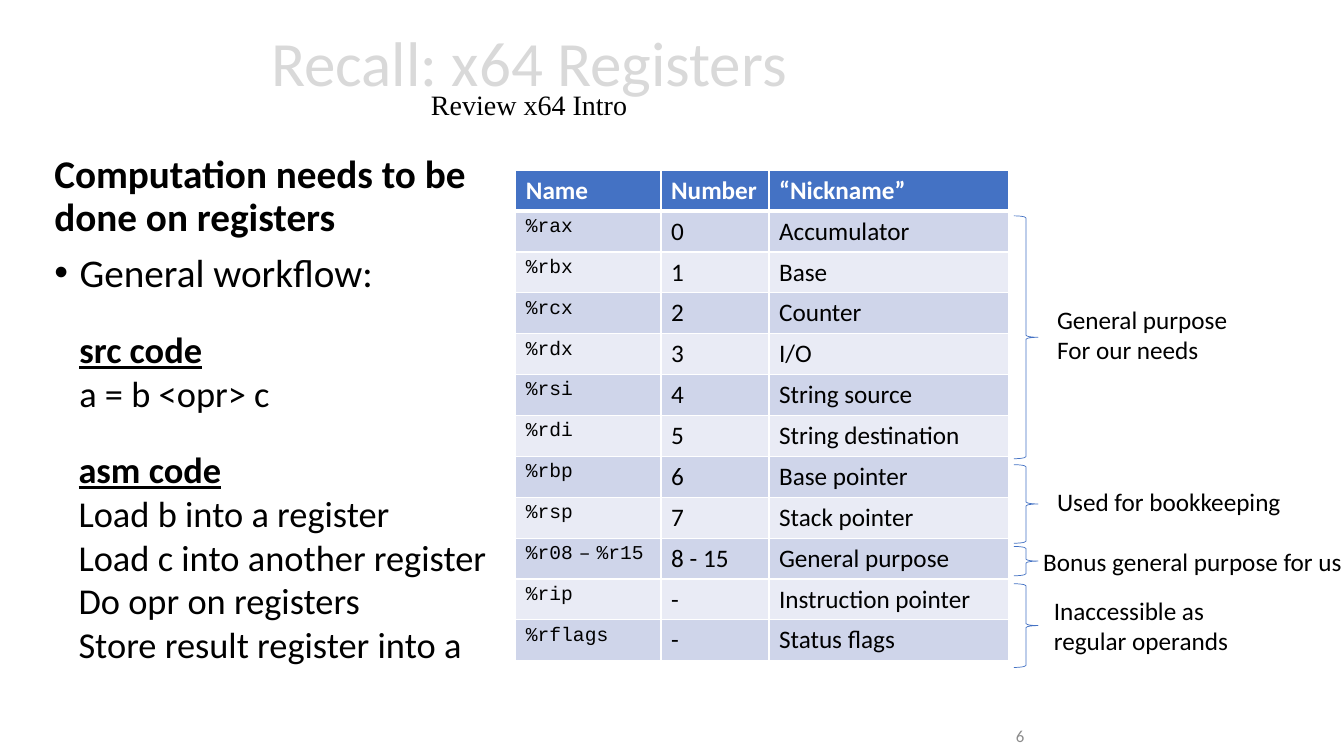
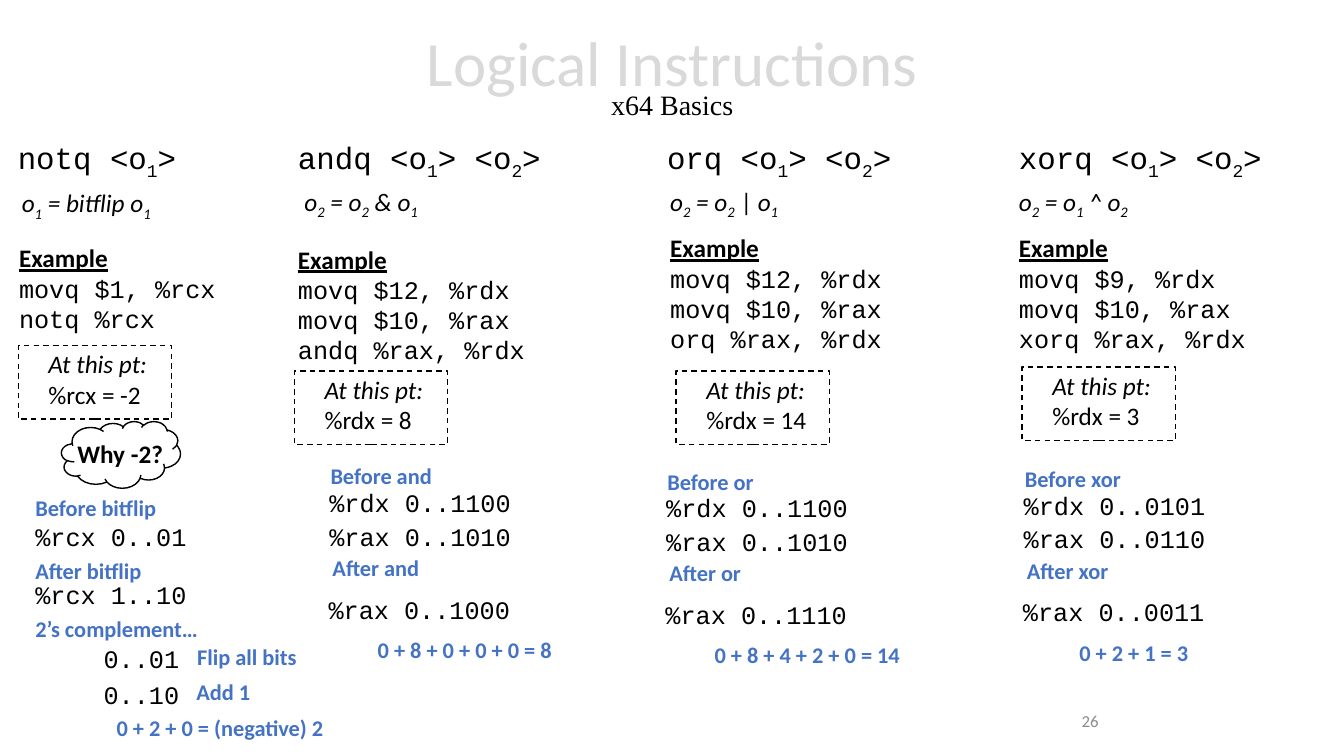
from dataclasses import dataclass

from lxml import etree
from pptx import Presentation
from pptx.dml.color import RGBColor
from pptx.enum.dml import MSO_LINE
from pptx.enum.shapes import MSO_SHAPE
from pptx.enum.text import MSO_ANCHOR, MSO_AUTO_SIZE, PP_ALIGN
from pptx.oxml.ns import qn
from pptx.util import Cm, Pt

RECTANGLE, BRACE, CLOUD = MSO_SHAPE.RECTANGLE, MSO_SHAPE.RIGHT_BRACE, MSO_SHAPE.CLOUD
CENTER, RIGHT = PP_ALIGN.CENTER, PP_ALIGN.RIGHT
TOP, MIDDLE = MSO_ANCHOR.TOP, MSO_ANCHOR.MIDDLE
GROW, FIXED = MSO_AUTO_SIZE.SHAPE_TO_FIT_TEXT, MSO_AUTO_SIZE.NONE
DASH = MSO_LINE.DASH

BOLD, PLAIN = {"bold": True}, {"italic": False}
HEADING = {"bold": True, "underline": True}
THIN_SPACE = (" ", {"size": 7})

REGISTERS_TITLE = ("Recall: x64 Registers", "Review x64 Intro")
REGISTERS_BODY = [[("Computation needs to be done on registers", BOLD)], "General workflow:"]
WORKFLOW = [
    (1.75, 8.13, 5.36, [[("src code", HEADING)], "a = b <opr> c"]),
    (1.73, 11.15, 10.9, [
        [("asm code", HEADING)],
        "Load b into a register",
        "Load c into another register",
        "Do opr on registers",
        "Store result register into a",
    ]),
]
REGISTER_ROWS = [
    ("Name", "Number", "“Nickname”"),
    ("%rax", "0", "Accumulator"),
    ("%rbx", "1", "Base"),
    ("%rcx", "2", "Counter"),
    ("%rdx", "3", "I/O"),
    ("%rsi", "4", "String source"),
    ("%rdi", "5", "String destination"),
    ("%rbp", "6", "Base pointer"),
    ("%rsp", "7", "Stack pointer"),
    ([("%r08", {}), THIN_SPACE, ("–", {}), THIN_SPACE, ("%r15", {})], "8 - 15", "General purpose"),
    ("%rip", "-", "Instruction pointer"),
    ("%rflags", "-", "Status flags"),
]
COLUMN_WIDTHS = (3.66, 2.72, 6.05)
ROW_HEIGHT = 1.03
BRACES = [
    (5.44, 6.12, (26.39, 7.54, 4.85), ["General purpose", "For our needs"]),
    (11.71, 1.98, (26.39, 12.14, 6.2), ["Used for bookkeeping"]),
    (13.77, 0.74, (26.04, 13.64, 8.13), ["Bonus general purpose for us"]),
    (14.71, 2.11, (26.31, 14.88, 4.95), ["Inaccessible as", "regular operands"]),
]

LOGICAL_TITLE = ("Logical Instructions", "x64 Basics")
INSTRUCTIONS = [
    {
        "syntax": (0.2, 3.38, 4.6, "notq <o_1>"),
        "rule": (0.3, 4.6, 4.04, "o_1 = bitflip o_1"),
        "example": (0.23, 5.99, 5.49, ["movq $1, %rcx", "notq %rcx"]),
        "checkpoint": (0.46, 8.71, 3.02, "%rcx = -2"),
    },
    {
        "syntax": (7.26, 3.38, 6.81, "andq <o_1> <o_2>"),
        "rule": (7.42, 4.57, 3.56, "o_2 = o_2 & o_1"),
        "example": (7.26, 6.02, 6.25, ["movq $12, %rdx", "movq $10, %rax", "andq %rax, %rdx"]),
        "checkpoint": (7.42, 9.35, 3.02, "%rdx = 8"),
    },
    {
        "syntax": (16.56, 3.38, 6.32, "orq <o_1> <o_2>"),
        "rule": (16.64, 4.57, 3.4, [("o_2 = o_2 ", {}), ("|", PLAIN), (" o_1", {})]),
        "example": (16.64, 5.74, 5.87, ["movq $12, %rdx", "movq $10, %rax", "orq %rax, %rdx"]),
        "checkpoint": (17.04, 9.35, 3.07, "%rdx = 14"),
    },
    {
        "syntax": (25.43, 3.38, 6.81, "xorq <o_1> <o_2>"),
        "rule": (25.43, 4.57, 3.43, "o_2 = o_1 ^ o_2"),
        "example": (25.43, 5.74, 6.25, ["movq $9, %rdx", "movq $10, %rax", "xorq %rax, %rdx"]),
        "checkpoint": (25.76, 9.25, 3.07, "%rdx = 3"),
    },
]
BITFLIP_STEPS = [
    ("note", 0.64, 12.32, 3.61, "Before bitflip"),
    ("code", 0.64, 13.0, 4.34, "%rcx 0..01"),
    ("note", 0.64, 13.92, 3.25, "After bitflip"),
    ("code", 0.64, 14.48, 4.34, "%rcx 1..10"),
    ("note", 0.64, 15.37, 4.72, "2’s complement…"),
    ("code", 2.36, 16.08, 2.44, "0..01"),
    ("note", 4.72, 16.08, 3.05, "Flip all bits"),
    ("code", 2.36, 16.99, 2.44, "0..10"),
    ("note", 4.7, 16.97, 1.91, "Add 1"),
    ("note", 2.69, 17.88, 5.79, "0 + 2 + 0 = (negative) 2"),
]
TRACE_LAYOUT = [
    ("note", 0.03, 0),
    ("code", 0, 0.62),
    ("code", 0, 1.47),
    ("note", 0.08, 2.31),
    ("code", -0.02, 3.31),
]
TRACES = [
    {
        "origin": (8.05, 11.53),
        "steps": [("Before and", 3.1), ("%rdx 0..1100", 5.11), ("%rax 0..1010", 5.11),
                  ("After and", 2.74), ("%rax 0..1000", 5.11)],
        "sum": (1.22, 4.98, "0 + 8 + 0 + 0 + 0 = 8"),
    },
    {
        "origin": (16.54, 11.66),
        "steps": [("Before or", 2.72), ("%rdx 0..1100", 5.11), ("%rax 0..1010", 5.11),
                  ("After or", 2.36), ("%rax 0..1110", 5.11)],
        "sum": (1.22, 5.26, "0 + 8 + 4 + 2 + 0 = 14"),
    },
    {
        "origin": (25.55, 11.6),
        "steps": [("Before xor", 2.97), ("%rdx 0..0101", 5.11), ("%rax 0..0110", 5.11),
                  ("After xor", 2.62), ("%rax 0..0011", 5.11)],
        "sum": (1.4, 3.3, "0 + 2 + 1 = 3"),
    },
]
SUM_TOP = 4.37


@dataclass(frozen=True)
class Theme:
    black: str = "000000"
    white: str = "FFFFFF"
    accent: str = "4472C4"
    pale: str = "D9D9D9"
    gray: str = "8C8C8C"
    bands: tuple = ("E9EBF5", "CFD5EA")
    sans: str = "Calibri"
    mono: str = "Courier New"
    serif: str = "Times New Roman"
    title: int = 45
    subtitle: int = 20
    body: int = 28
    workflow: int = 26
    syntax: int = 22
    text: int = 18
    note: int = 16
    cell_code: int = 14
    footer: int = 12


THEME = Theme()
STEP_STYLES = {
    "note": {"size": THEME.note, "color": THEME.accent, "bold": True},
    "code": {"font": THEME.mono},
}


def split_subscripts(text):
    head, *tails = text.split("_")
    pieces = [(head, False)]
    for tail in tails:
        pieces += [(tail[0], True), (tail[1:], False)]
    return [piece for piece in pieces if piece[0]]


def write_text(frame, lines, align=None, line_spacing=None, space_before=None, **style):
    base = {"size": THEME.text, "font": THEME.sans, "color": THEME.black,
            "bold": False, "italic": False, "underline": False, **style}
    for index, line in enumerate(lines):
        paragraph = frame.add_paragraph() if index else frame.paragraphs[0]
        paragraph.alignment = align
        paragraph.line_spacing = line_spacing
        if space_before is not None:
            paragraph.space_before = Pt(space_before)
        for text, changes in [(line, {})] if isinstance(line, str) else line:
            look = {**base, **changes}
            for piece, subscript in split_subscripts(text):
                run = paragraph.add_run()
                run.text = piece
                font = run.font
                font.size, font.name = Pt(look["size"]), look["font"]
                font.color.rgb = RGBColor.from_string(look["color"])
                font.bold, font.italic = look["bold"], look["italic"]
                font.underline = look["underline"]
                if subscript:
                    run._r.get_or_add_rPr().set("baseline", "-25000")


def add_text(slide, left, top, width, lines, height=None, anchor=TOP, **style):
    grows = height is None
    if grows:
        height = 0.25 + 0.0427 * style.get("size", THEME.text) * len(lines)
    frame = slide.shapes.add_textbox(Cm(left), Cm(top), Cm(width), Cm(height)).text_frame
    frame.word_wrap = not grows
    frame.auto_size = GROW if grows else FIXED
    frame.vertical_anchor = anchor
    write_text(frame, lines, **style)
    return frame


def add_outline(slide, kind, left, top, width, height, color, weight=1, fill=None, dash=None):
    shape = slide.shapes.add_shape(kind, Cm(left), Cm(top), Cm(width), Cm(height))
    shape.shadow.inherit = False
    if fill:
        shape.fill.solid()
        shape.fill.fore_color.rgb = RGBColor.from_string(fill)
    else:
        shape.fill.background()
    shape.line.color.rgb = RGBColor.from_string(color)
    shape.line.width = Pt(weight)
    if dash:
        shape.line.dash_style = dash


def add_slide(presentation, titles, title_left, title_width, number, number_box):
    slide = presentation.slides.add_slide(presentation.slide_layouts[6])
    title, subtitle = titles
    lines = [
        [(title, {"size": THEME.title, "color": THEME.pale})],
        [(subtitle, {"size": THEME.subtitle, "font": THEME.serif})],
    ]
    add_text(slide, title_left, 0.23, title_width, lines, height=3.68,
             anchor=MIDDLE, align=CENTER, line_spacing=0.7)
    add_text(slide, *number_box, [number], height=1.02, anchor=MIDDLE,
             align=RIGHT, size=THEME.footer, color=THEME.gray)
    return slide


def set_bullet(paragraph, indent):
    properties = paragraph._p.get_or_add_pPr()
    properties.set("marL", str(Cm(indent)))
    properties.set("indent", str(-Cm(indent)))
    etree.SubElement(properties, qn("a:buFont")).set("typeface", "Arial")
    etree.SubElement(properties, qn("a:buChar")).set("char", "•")


def set_borders(cell, **weights):
    properties = cell._tc.get_or_add_tcPr()
    for side in "LRTB":
        line = etree.SubElement(properties, qn(f"a:ln{side}"), w=str(Pt(weights.get(side, 1))))
        fill = etree.SubElement(line, qn("a:solidFill"))
        etree.SubElement(fill, qn("a:srgbClr")).set("val", THEME.white)


def add_register_table(slide):
    table = slide.shapes.add_table(
        len(REGISTER_ROWS), len(COLUMN_WIDTHS), Cm(13), Cm(4.29),
        Cm(sum(COLUMN_WIDTHS)), Cm(ROW_HEIGHT * len(REGISTER_ROWS))).table
    for column, width in zip(table.columns, COLUMN_WIDTHS):
        column.width = Cm(width)
    for row_index, values in enumerate(REGISTER_ROWS):
        table.rows[row_index].height = Cm(ROW_HEIGHT)
        for column_index, value in enumerate(values):
            cell = table.cell(row_index, column_index)
            if row_index == 0:
                fill, style, borders = THEME.accent, {"color": THEME.white, "bold": True}, {"B": 3}
            else:
                fill = THEME.bands[row_index % 2]
                style = {} if column_index else {"font": THEME.mono, "size": THEME.cell_code}
                borders = {"T": 3} if row_index == 1 else {}
            set_borders(cell, **borders)
            cell.fill.solid()
            cell.fill.fore_color.rgb = RGBColor.from_string(fill)
            write_text(cell.text_frame, [value], **style)


def build_registers(presentation):
    slide = add_slide(presentation, REGISTERS_TITLE, 2.39, 21.89, "6", (20.35, 18.03, 5.72))
    add_register_table(slide)
    body = add_text(slide, 1.12, 3.78, 11.28, REGISTERS_BODY, height=12.09,
                    size=THEME.body, line_spacing=0.9, space_before=10)
    set_bullet(body.paragraphs[1], 0.64)
    for left, top, width, lines in WORKFLOW:
        add_text(slide, left, top, width, lines, size=THEME.workflow)
    for top, height, label_box, label in BRACES:
        add_outline(slide, BRACE, 25.55, top, 0.61, height, THEME.accent, weight=0.5)
        add_text(slide, *label_box, label)


def add_instruction(slide, syntax, rule, example, checkpoint):
    add_text(slide, *syntax[:3], [syntax[3]], size=THEME.syntax, font=THEME.mono)
    add_text(slide, *rule[:3], [rule[3]], italic=True)
    heading = [("Example", {**HEADING, "font": THEME.sans})]
    add_text(slide, *example[:3], [heading, *example[3]], font=THEME.mono)
    left, top, width, value = checkpoint
    add_outline(slide, RECTANGLE, left, top, 3.86, 1.85, THEME.black, fill=THEME.white, dash=DASH)
    add_text(slide, left + 0.51, top - 0.05, width, ["At this pt:", [(value, PLAIN)]], italic=True)


def build_logical(presentation):
    slide = add_slide(presentation, LOGICAL_TITLE, 4.24, 25.4, "26", (20.32, 17.65, 7.62))
    for instruction in INSTRUCTIONS:
        add_instruction(slide, **instruction)
    add_outline(slide, CLOUD, 1.55, 10.62, 3, 1.68, THEME.black, fill=THEME.white)
    add_outline(slide, RECTANGLE, 2.62, 11.02, 1.5, 0.66, THEME.white, fill=THEME.white)
    add_text(slide, 1.7, 10.92, 2.69, ["Why -2?"], bold=True)
    steps = list(BITFLIP_STEPS)
    for trace in TRACES:
        left, top = trace["origin"]
        for (kind, shift, drop), (text, width) in zip(TRACE_LAYOUT, trace["steps"]):
            steps.append((kind, left + shift, top + drop, width, text))
        shift, width, text = trace["sum"]
        steps.append(("note", left + shift, top + SUM_TOP, width, text))
    for kind, left, top, width, text in steps:
        add_text(slide, left, top, width, [text], **STEP_STYLES[kind])


def main():
    presentation = Presentation()
    presentation.slide_width, presentation.slide_height = Cm(33.87), Cm(19.05)
    build_registers(presentation)
    build_logical(presentation)
    presentation.save("out.pptx")


if __name__ == "__main__":
    main()
